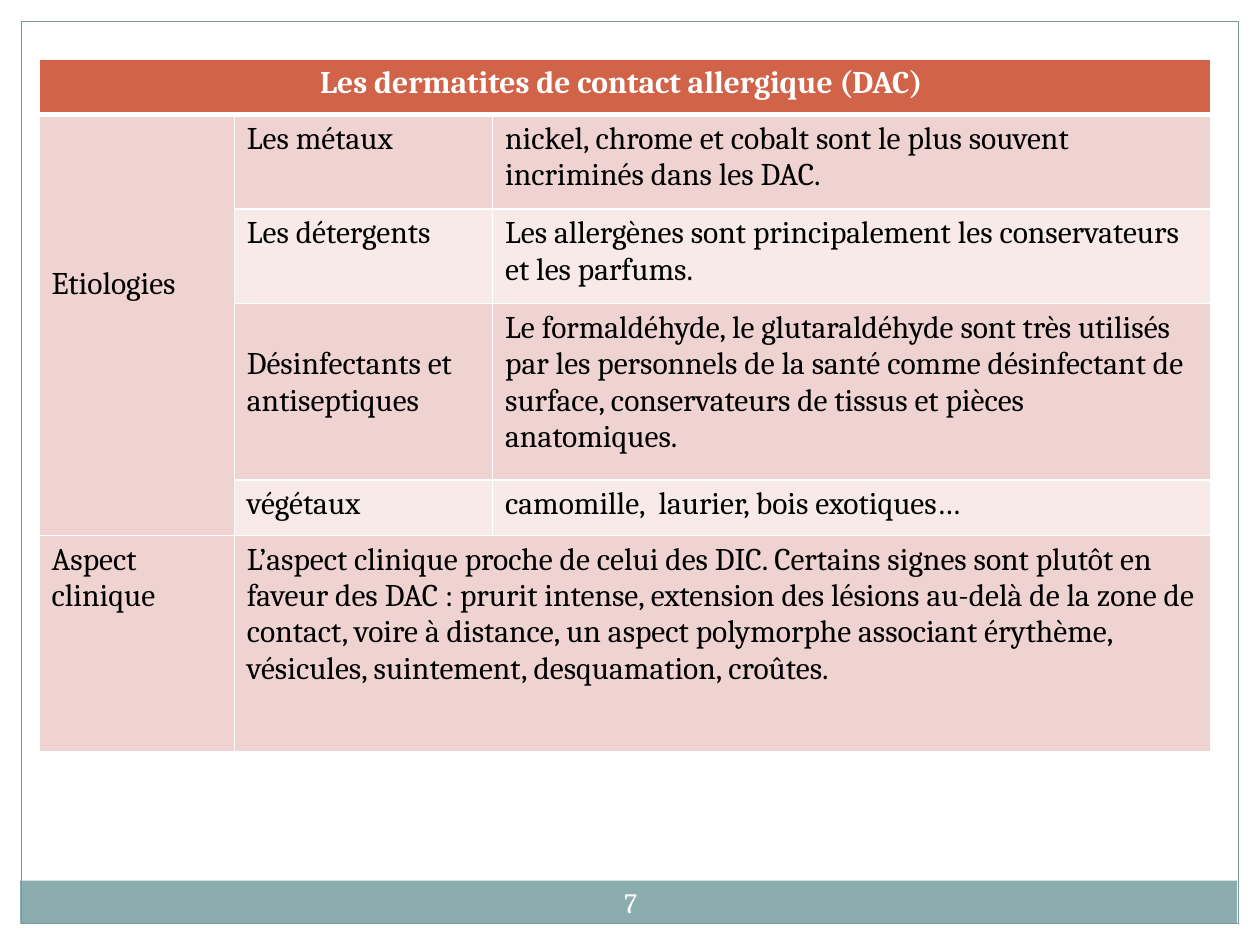
from dataclasses import dataclass

from lxml import etree
from pptx import Presentation
from pptx.dml.color import RGBColor as Rgb
from pptx.enum.shapes import MSO_SHAPE as Shape
from pptx.enum.text import MSO_ANCHOR as Anchor, PP_ALIGN as Align
from pptx.oxml.ns import qn
from pptx.util import Inches, Pt


@dataclass(frozen=True)
class Theme:
    font: str = "Cambria"
    table_size: int = 18
    number_size: int = 16
    white: str = "FFFFFF"
    black: str = "000000"
    header: str = "D16349"
    dark_band: str = "EED3D0"
    light_band: str = "F7EAE9"
    footer: str = "8CADAE"
    frame: str = "7C999A"


theme = Theme()


def style_text(para, size, color, bold=False, align=Align.LEFT):
    para.alignment = align
    para.font.name = theme.font
    para.font.size = Pt(size)
    para.font.bold = bold
    para.font.color.rgb = Rgb.from_string(color)


def set_borders(cell, widths):
    """Draw white borders; widths are points for left, right, top, bottom."""
    props = cell._tc.get_or_add_tcPr()
    for index, (side, width) in enumerate(zip("LRTB", widths)):
        line = etree.Element(qn(f"a:ln{side}"), w=str(Pt(width)))
        fill = etree.SubElement(line, qn("a:solidFill"))
        etree.SubElement(fill, qn("a:srgbClr"), val=theme.white)
        props.insert(index, line)


deck = Presentation()
deck.slide_width, deck.slide_height = Inches(10), Inches(7.5)
page = deck.slides.add_slide(deck.slide_layouts[6])

# White page margins (top, right, left) and footer band
for left, top, width, height, color in [
    (0, 0, 10, 0.17, theme.white),
    (9.83, 0, 0.17, 7.5, theme.white),
    (0, 0, 0.17, 7.5, theme.white),
    (0.16, 6.99, 9.66, 0.34, theme.footer),
]:
    band = page.shapes.add_shape(
        Shape.RECTANGLE, Inches(left), Inches(top), Inches(width), Inches(height))
    band.shadow.inherit = False
    band.fill.solid()
    band.fill.fore_color.rgb = Rgb.from_string(color)
    band.line.fill.background()

# Page frame
frame = page.shapes.add_shape(
    Shape.RECTANGLE, Inches(0.17), Inches(0.17), Inches(9.66), Inches(7.16))
frame.shadow.inherit = False
frame.fill.background()
frame.line.color.rgb = Rgb.from_string(theme.frame)
frame.line.width = Pt(0.75)

# Table contents: None marks a cell covered by a merge
rows = [
    ["Les dermatites de contact allergique (DAC)\u00a0", None, None],
    ["Etiologies", "Les métaux\u00a0",
     "nickel, chrome et cobalt sont le plus souvent incriminés dans les DAC."],
    [None, "Les détergents",
     "Les allergènes sont principalement les conservateurs et les parfums."],
    [None, "Désinfectants et antiseptiques\u00a0",
     "Le formaldéhyde, le glutaraldéhyde sont très utilisés par les personnels "
     "de la santé comme désinfectant de surface, conservateurs de tissus et "
     "pièces anatomiques."],
    [None, "végétaux", "camomille,  laurier, bois exotiques…"],
    ["Aspect clinique",
     "L’aspect clinique proche de celui des DIC. Certains signes sont plutôt en "
     "faveur des DAC\u00a0: prurit intense, extension des lésions au-delà de la "
     "zone de contact, voire à distance, un aspect polymorphe associant "
     "érythème, vésicules, suintement, desquamation, croûtes.", None],
]
column_widths = [1.55, 2.05, 5.7]
row_heights = [0.44, 0.75, 0.75, 1.4, 0.44, 1.72]
merges = [((0, 0), (0, 2)), ((1, 0), (4, 0)), ((5, 1), (5, 2))]
top_margins = {(1, 0): 1.2, (3, 1): 0.34}

table = page.shapes.add_table(
    len(rows), len(column_widths), Inches(0.31), Inches(0.47),
    Inches(sum(column_widths)), Inches(sum(row_heights))).table
for column, width in zip(table.columns, column_widths):
    column.width = Inches(width)
for row, height in zip(table.rows, row_heights):
    row.height = Inches(height)
for start, end in merges:
    table.cell(*start).merge(table.cell(*end))

# Cell fills, borders and text
for r, texts in enumerate(rows):
    for c, text in enumerate(texts):
        cell = table.cell(r, c)
        is_header = r == 0
        is_light = r in (2, 4) and c > 0
        color = (theme.header if is_header
                 else theme.light_band if is_light else theme.dark_band)
        cell.fill.solid()
        cell.fill.fore_color.rgb = Rgb.from_string(color)
        set_borders(cell, (1, 1, 1, 3 if is_header else 1))
        if text is None:
            continue
        cell.margin_top = Inches(top_margins.get((r, c), 0.05))
        cell.text = text
        style_text(cell.text_frame.paragraphs[0], theme.table_size,
                   theme.white if is_header else theme.black,
                   bold=is_header,
                   align=Align.CENTER if is_header else Align.LEFT)

# Page number
box = page.shapes.add_textbox(
    Inches(4.67), Inches(6.92), Inches(0.67), Inches(0.48))
number = box.text_frame
number.word_wrap = True
number.vertical_anchor = Anchor.MIDDLE
number.margin_left = number.margin_right = Inches(0.05)
number.margin_top = number.margin_bottom = Inches(0.05)
number.text = "7"
style_text(number.paragraphs[0], theme.number_size, theme.white,
           align=Align.CENTER)

deck.save("out.pptx")
